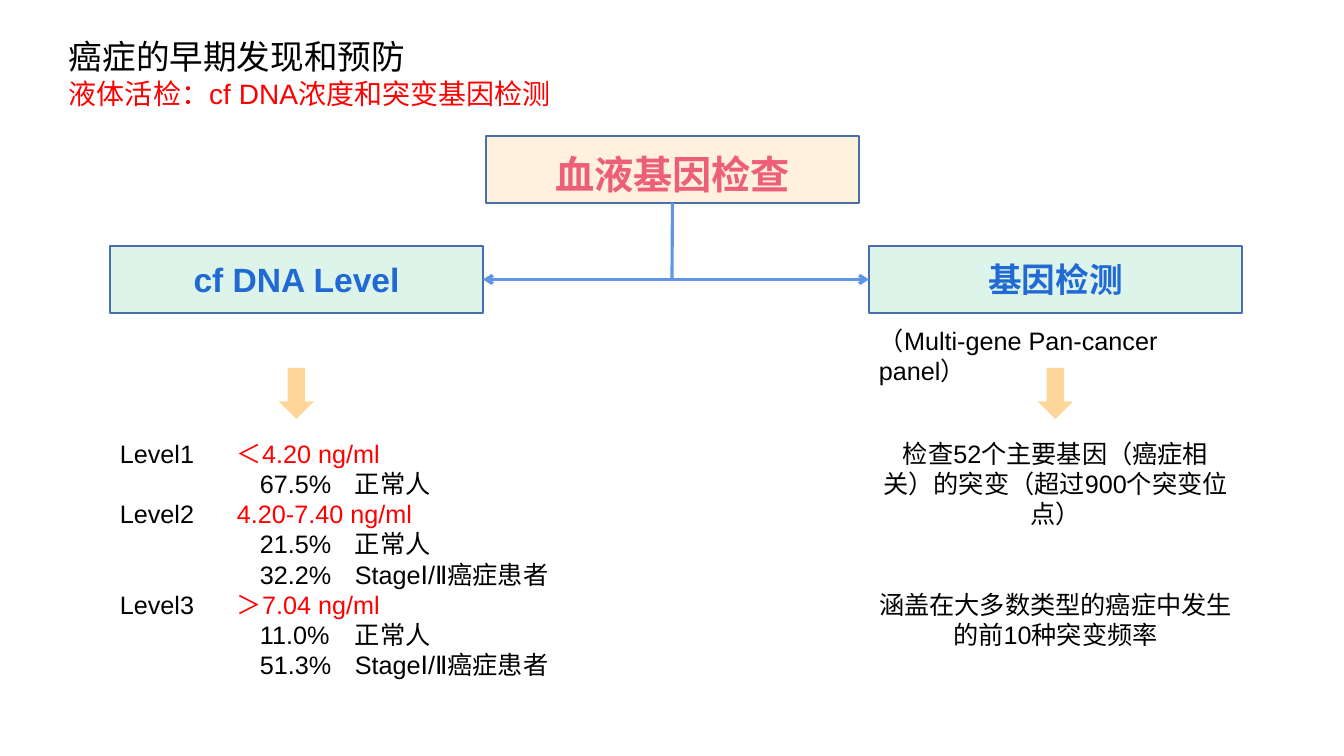
from dataclasses import dataclass

from lxml import etree
from pptx import Presentation
from pptx import util as u
from pptx.dml.color import RGBColor
from pptx.enum import shapes, text
from pptx.oxml import ns


@dataclass(frozen=True)
class Theme:
    font: str = "Arial"
    black: str = "000000"
    red: str = "FF0000"
    pink: str = "EC5F74"
    blue: str = "2169D3"
    edge: str = "476FAA"
    link: str = "6096E6"
    cream: str = "FFF1DD"
    mint: str = "DDF4EA"
    amber: str = "FFD699"
    head: int = 28
    title: int = 24
    sub: int = 20
    body: int = 18


class Board:
    """Draws styled elements on one slide, with lengths in px."""

    def __init__(self, deck, theme):
        self.theme = theme
        self.slide = deck.slides.add_slide(deck.slide_layouts[6])

    @staticmethod
    def px(*sizes):
        return [u.Emu(round(size * 12192000 / 1344)) for size in sizes]

    def run(self, para, words, size, color, bold=False):
        font = para.add_run()
        font.text = words
        font = font.font
        style = {"name": self.theme.font, "size": u.Pt(size), "bold": bold}
        for key, value in style.items():
            setattr(font, key, value)
        font.color.rgb = RGBColor.from_string(color)

    def tabs(self, para, stops):
        tab_list = etree.SubElement(para._p.get_or_add_pPr(), ns.qn("a:tabLst"))
        for stop in self.px(*stops):
            etree.SubElement(tab_list, ns.qn("a:tab"), pos=str(stop), algn="l")

    def shape(self, kind, place, fill, edge=None):
        shape = self.slide.shapes.add_shape(kind, *self.px(*place))
        shape.shadow.inherit = False
        shape.fill.solid()
        shape.fill.fore_color.rgb = RGBColor.from_string(fill)
        if edge:
            shape.line.color.rgb = RGBColor.from_string(edge)
            shape.line.width = u.Pt(1)
        else:
            shape.line.fill.background()
        return shape

    def box(self, place, fill, words, size, color, drop=0):
        box = self.shape(shapes.MSO_SHAPE.RECTANGLE, place, fill, self.theme.edge)
        frame = box.text_frame
        style = {"word_wrap": True, "vertical_anchor": text.MSO_ANCHOR.MIDDLE,
                 "margin_top": self.px(5 + drop)[0], "margin_bottom": self.px(5)[0]}
        for key, value in style.items():
            setattr(frame, key, value)
        para = frame.paragraphs[0]
        para.alignment = text.PP_ALIGN.CENTER
        self.run(para, words, size, color, True)
        return box

    def arrow(self, place):
        self.shape(shapes.MSO_SHAPE.DOWN_ARROW, place, self.theme.amber)

    def line(self, ends, start, stop=None, tips=()):
        line = self.slide.shapes.add_connector(
            shapes.MSO_CONNECTOR.STRAIGHT, *self.px(*ends))
        line.begin_connect(*start)
        if stop:
            line.end_connect(*stop)
        line.line.color.rgb = RGBColor.from_string(self.theme.link)
        line.line.width = u.Pt(2.25)
        for tip in tips:
            etree.SubElement(line.line._get_or_add_ln(), ns.qn(tip), type="arrow")
        etree.SubElement(line._element.spPr, ns.qn("a:effectLst"))

    def note(self, place, paras, align=text.PP_ALIGN.LEFT, gap=0):
        frame = self.slide.shapes.add_textbox(*self.px(*place)).text_frame
        frame.word_wrap = True
        frame.auto_size = text.MSO_AUTO_SIZE.SHAPE_TO_FIT_TEXT
        for index, (runs, stops) in enumerate(paras):
            para = frame.add_paragraph() if index else frame.paragraphs[0]
            para.alignment = align
            if index and gap:
                para.space_before = u.Pt(gap)
            if stops:
                self.tabs(para, stops)
            for run in runs:
                self.run(para, *run)


def main():
    theme = Theme()
    deck = Presentation()
    deck.slide_width, deck.slide_height = Board.px(1344, 756)
    board = Board(deck, theme)
    left, mid, right, wide, high = 110, 486, 869, 373, 67

    board.note((59, 31, 675, 85), [
        ([("癌症的早期发现和预防", theme.title, theme.black)], ()),
        ([("液体活检：cf DNA浓度和突变基因检测", theme.sub, theme.red)], ())])

    blood = board.box((mid, 136, wide, high), theme.cream,
                      "血液基因检查", theme.head, theme.pink, 9)
    level, gene = [
        board.box((x, 246, wide, high), theme.mint, words, theme.title, theme.blue)
        for x, words in ((left, "cf DNA Level"), (right, "基因检测"))]
    board.line((left + wide, 279, right, 279), (level, 3), (gene, 1),
               ("a:headEnd", "a:tailEnd"))
    board.line((672, 203, 672, 279), (blood, 2))
    for x in (left, right):
        board.arrow((x + 169, 368, 35, 51))

    def plain(words):
        return [(words, theme.body, theme.black)]

    normal, cancer = "正常人", "StageⅠ/Ⅱ癌症患者"
    levels = (
        ("Level1", "＜4.20 ng/ml", [("67.5%", normal)]),
        ("Level2", "4.20-7.40 ng/ml", [("21.5%", normal), ("32.2%", cancer)]),
        ("Level3", "＞7.04 ng/ml", [("11.0%", normal), ("51.3%", cancer)]))
    rows = []
    for name, span, shares in levels:
        rows.append((plain(name + "\t") + [(span, theme.body, theme.red)], (117,)))
        rows += [(plain(f"\t{share}\t{group}"), (140, 235)) for share, group in shares]
    board.note((left, 433, 487, 254), rows)

    board.note((right, 320, wide, 40), [(plain("（Multi-gene Pan-cancer panel）"), ())])
    board.note((right, 433, wide, 194), [
        (plain("检查52个主要基因（癌症相关）的突变（超过900个突变位点）"), ()),
        (plain("涵盖在大多数类型的癌症中发生的前10种突变频率"), ())],
        text.PP_ALIGN.CENTER, 43)
    deck.save("out.pptx")


if __name__ == "__main__":
    main()
